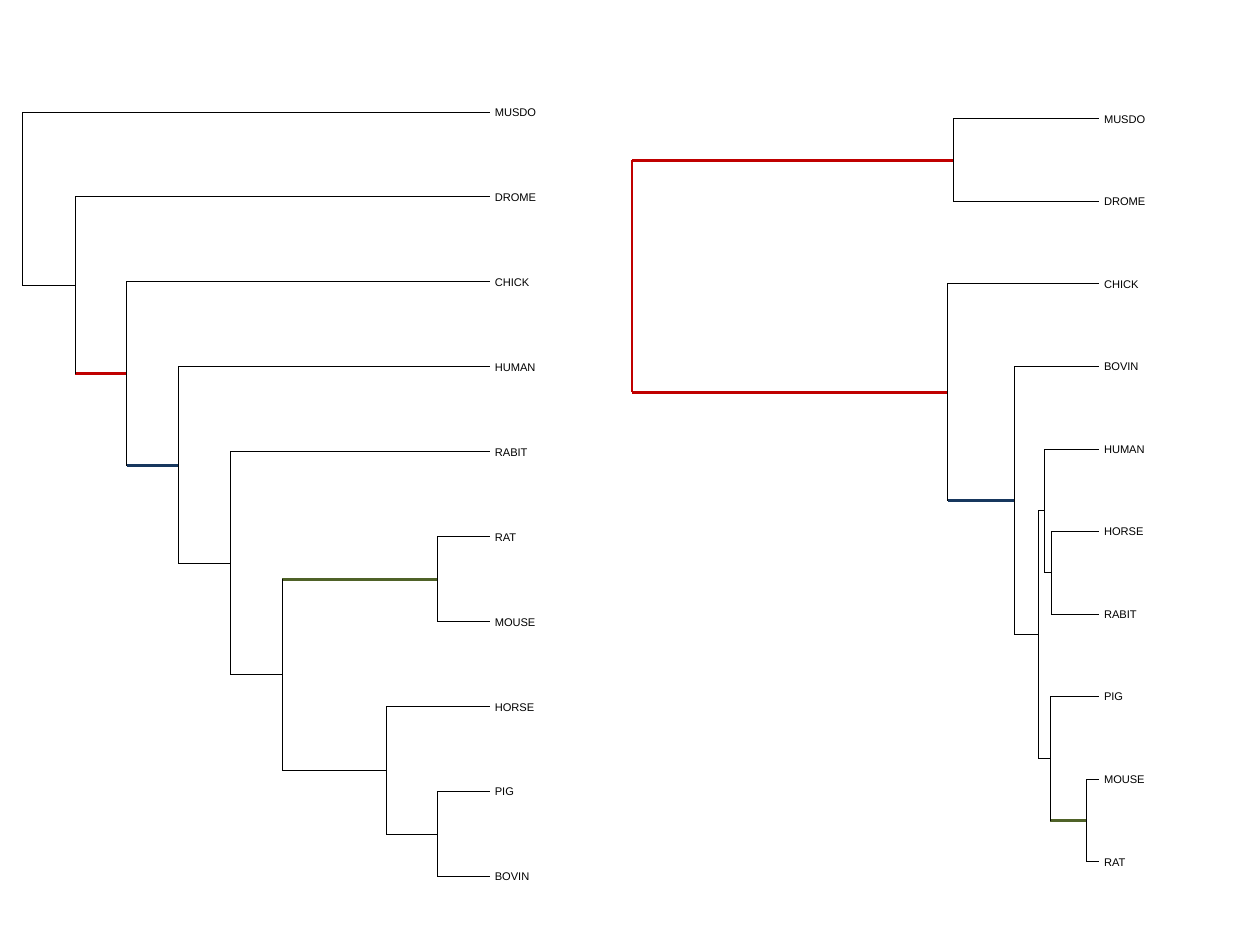
from pptx import Presentation
from pptx.dml.color import RGBColor
from pptx.enum.shapes import MSO_CONNECTOR
from pptx.enum.text import MSO_ANCHOR, MSO_AUTO_SIZE, PP_ALIGN
from pptx.oxml.ns import qn
from pptx.util import Inches, Pt
from lxml import etree

STRAIGHT = MSO_CONNECTOR.STRAIGHT
TOP = MSO_ANCHOR.TOP
GROW = MSO_AUTO_SIZE.SHAPE_TO_FIT_TEXT
LEFT = PP_ALIGN.LEFT

COLORS = {"black": "000000", "red": "C00000",
          "blue": "17375E", "green": "4F6228"}

# Label widths in inches
WIDTHS = {"MUSDO": 0.37, "DROME": 0.37, "CHICK": 0.31, "HUMAN": 0.36,
          "RABIT": 0.29, "RAT": 0.2, "MOUSE": 0.36, "HORSE": 0.35,
          "PIG": 0.17, "BOVIN": 0.31}

# A node is (x, stem colour, upper child, lower child); a leaf is a name
LEFT_ROOT = (0.2, "black", "MUSDO",
             (0.66, "black", "DROME",
              (1.11, "red", "CHICK",
               (1.56, "blue", "HUMAN",
                (2.02, "black", "RABIT",
                 (2.47, "black",
                  (3.83, "green", "RAT", "MOUSE"),
                  (3.38, "black", "HORSE",
                   (3.83, "black", "PIG", "BOVIN"))))))))

RIGHT_ROOT = (5.53, "red",
              (8.34, "red", "MUSDO", "DROME"),
              (8.29, "red", "CHICK",
               (8.88, "blue", "BOVIN",
                (9.09, "black",
                 (9.14, "black", "HUMAN",
                  (9.2, "black", "HORSE", "RABIT")),
                 (9.19, "black", "PIG",
                  (9.51, "green", "MOUSE", "RAT"))))))

TREES = [
    {"root": LEFT_ROOT, "tip": 4.28, "top": 0.98, "end": 7.67},
    {"root": RIGHT_ROOT, "tip": 9.61, "top": 1.04, "end": 7.54},
]
GAP = 0.05     # from leaf line to label
HIGH = 0.12    # label height
THIN, MID, BOLD = 0, 1, 1.75

# Page of 28 by 21 centimetres
deck = Presentation()
deck.slide_width, deck.slide_height = Inches(28 / 2.54), Inches(21 / 2.54)
slide = deck.slides.add_slide(deck.slide_layouts[6])


def add_line(x1, y1, x2, y2, color="black", width=THIN):
    line = slide.shapes.add_connector(
        STRAIGHT, Inches(x1), Inches(y1), Inches(x2), Inches(y2))
    line.line.color.rgb = RGBColor.from_string(COLORS[color])
    # A hairline needs its zero width written out
    props = line._element.spPr
    props.find(qn("a:ln")).set("w", str(int(Pt(width))))
    etree.SubElement(props, qn("a:effectLst"))


def add_text(text, x, y, wide, size=7, font="Arial", color="black"):
    box = slide.shapes.add_textbox(
        Inches(x), Inches(y), Inches(wide), Inches(HIGH))
    frame = box.text_frame
    frame.margin_left = frame.margin_right = 0
    frame.margin_top = frame.margin_bottom = 0
    frame.word_wrap = False
    frame.auto_size = GROW
    frame.vertical_anchor = TOP
    para = frame.paragraphs[0]
    para.alignment = LEFT
    run = para.add_run()
    run.text = text
    run.font.size = Pt(size)
    run.font.name = font
    run.font.color.rgb = RGBColor.from_string(COLORS[color])


def leaves(node):
    if isinstance(node, str):
        return [node]
    return leaves(node[2]) + leaves(node[3])


def draw(node, start, rows, tip):
    """Draw a branch whose stem begins at start; return its height."""
    if isinstance(node, str):
        y = rows[node]
        add_line(tip, y, start, y)
        add_text(node, tip + GAP, y - HIGH / 2, WIDTHS[node])
        return y
    x, color, upper, lower = node
    y1, y2 = [draw(child, x, rows, tip) for child in (upper, lower)]
    y = (y1 + y2) / 2
    if start is None:
        # The root has no stem: its colour goes on the spine
        add_line(x, y1, x, y2, color, THIN if color == "black" else MID)
    else:
        add_line(x, y, start, y, color, THIN if color == "black" else BOLD)
        add_line(x, y1, x, y2)
    return y


# Both trees, with leaves spread evenly from top to end
for tree in TREES:
    names = leaves(tree["root"])
    step = (tree["end"] - tree["top"]) / (len(names) - 1)
    rows = {name: tree["top"] + i * step for i, name in enumerate(names)}
    draw(tree["root"], None, rows, tree["tip"])

deck.save("out.pptx")
